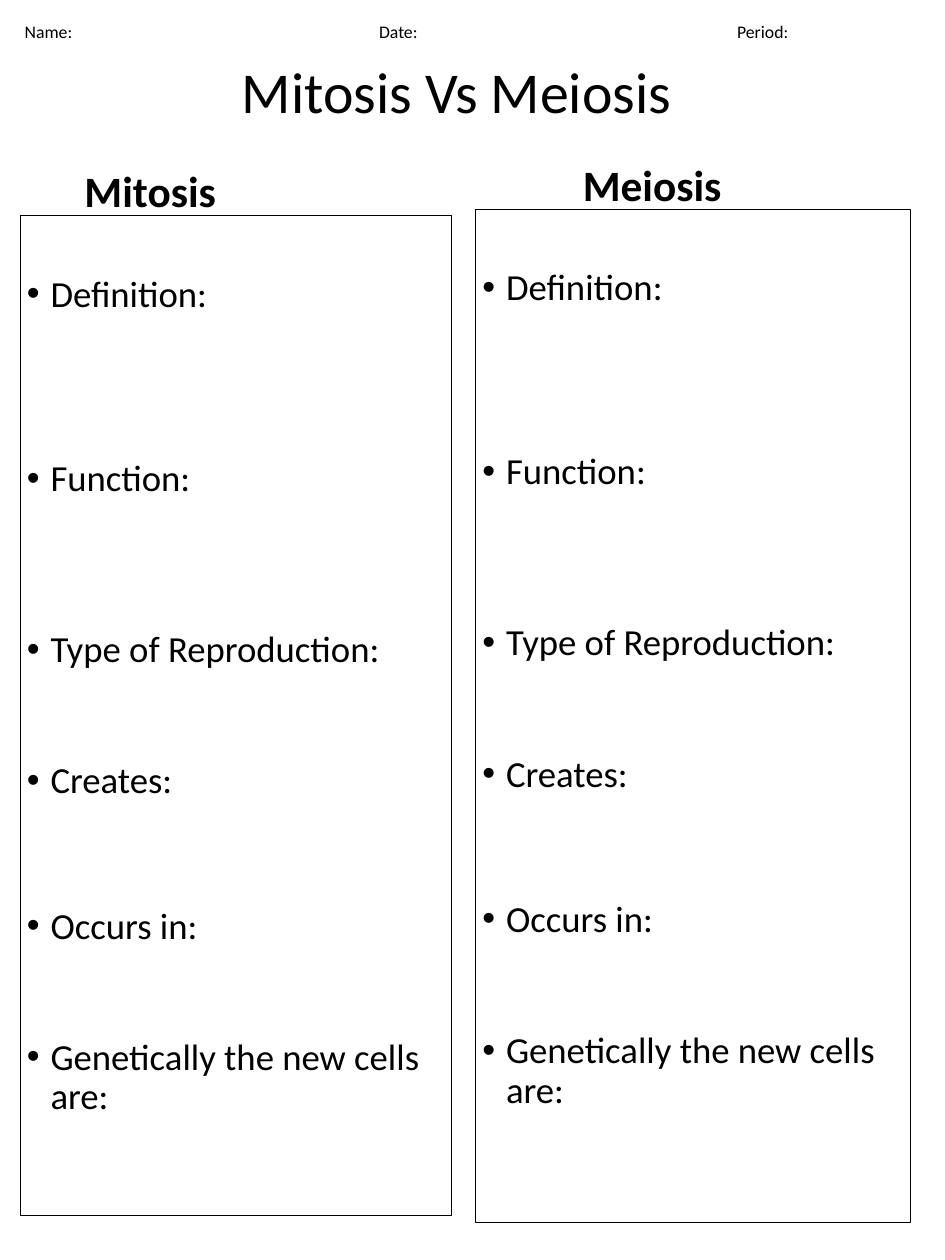
from lxml.etree import SubElement
from pptx import Presentation
from pptx.dml.color import RGBColor
from pptx.enum.shapes import MSO_SHAPE
from pptx.enum.text import MSO_ANCHOR, PP_ALIGN
from pptx.oxml.ns import qn
from pptx.util import Emu, Pt

BLACK = RGBColor(0, 0, 0)
EMU_PER_PX = 9525
PROMPTS = [
    ("Definition:", 0),
    ("Function:", 147),
    ("Type of Reproduction:", 133.7),
    ("Creates:", 93),
    ("Occurs in:", 107.3),
    ("Genetically the new cells are:", 93),
]


def px(length):
    return Emu(length * EMU_PER_PX)


class Worksheet:
    font_name = "Calibri"
    color = BLACK
    bullet_indent = 32

    def __init__(self, width, height):
        self.presentation = Presentation()
        self.presentation.slide_width = px(width)
        self.presentation.slide_height = px(height)
        self.slide = self.presentation.slides.add_slide(self.presentation.slide_layouts[6])

    def style(self, paragraph, size, bold=False):
        paragraph.alignment = PP_ALIGN.LEFT
        paragraph.font.name = self.font_name
        paragraph.font.size = Pt(size)
        paragraph.font.bold = bold
        paragraph.font.color.rgb = self.color

    def text(self, box, words, size, anchor, bold=False, spacing=0.9, tabs=()):
        frame = self.slide.shapes.add_textbox(*map(px, box)).text_frame
        frame.word_wrap = True
        frame.vertical_anchor = anchor
        paragraph = frame.paragraphs[0]
        paragraph.text = words
        paragraph.line_spacing = spacing
        if tabs:
            tab_list = SubElement(paragraph._p.get_or_add_pPr(), qn("a:tabLst"))
            for position in tabs:
                SubElement(tab_list, qn("a:tab"), pos=str(px(position)), algn="l")
        self.style(paragraph, size, bold)

    def prompt_panel(self, box, prompts, top_inset):
        panel = self.slide.shapes.add_shape(MSO_SHAPE.RECTANGLE, *map(px, box))
        panel.shadow.inherit = False
        panel.fill.background()
        panel.line.color.rgb = self.color
        panel.line.width = Pt(0.75)
        frame = panel.text_frame
        frame.word_wrap = True
        frame.vertical_anchor = MSO_ANCHOR.TOP
        frame.margin_top = px(top_inset)
        for index, (words, space_before) in enumerate(prompts):
            paragraph = frame.add_paragraph() if index else frame.paragraphs[0]
            paragraph.text = words
            paragraph.line_spacing = 0.9
            paragraph.space_before = Pt(space_before)
            self.bullet(paragraph)
            self.style(paragraph, 37.3)

    def bullet(self, paragraph):
        properties = paragraph._p.get_or_add_pPr()
        properties.set("marL", str(px(self.bullet_indent)))
        properties.set("indent", str(-px(self.bullet_indent)))
        SubElement(properties, qn("a:buFont"), typeface="Arial")
        SubElement(properties, qn("a:buChar"), char="•")


def main():
    worksheet = Worksheet(1280, 1707)
    worksheet.text((318, 63, 603, 131), "Mitosis Vs Meiosis", 58.7, MSO_ANCHOR.MIDDLE)
    worksheet.text((105, 224, 265, 75), "Mitosis", 44, MSO_ANCHOR.BOTTOM, bold=True)
    worksheet.text((780, 218, 284, 73), "Meiosis", 44, MSO_ANCHOR.BOTTOM, bold=True)
    for box in ((27, 292, 584, 1354), (644, 283, 589, 1373)):
        worksheet.prompt_panel(box, PROMPTS, top_inset=81)
    worksheet.text((24, 24, 1210, 38), "Name:\tDate:\tPeriod:", 18, MSO_ANCHOR.TOP,
                   spacing=1.0, tabs=(480, 965))
    worksheet.presentation.save("out.pptx")


if __name__ == "__main__":
    main()
